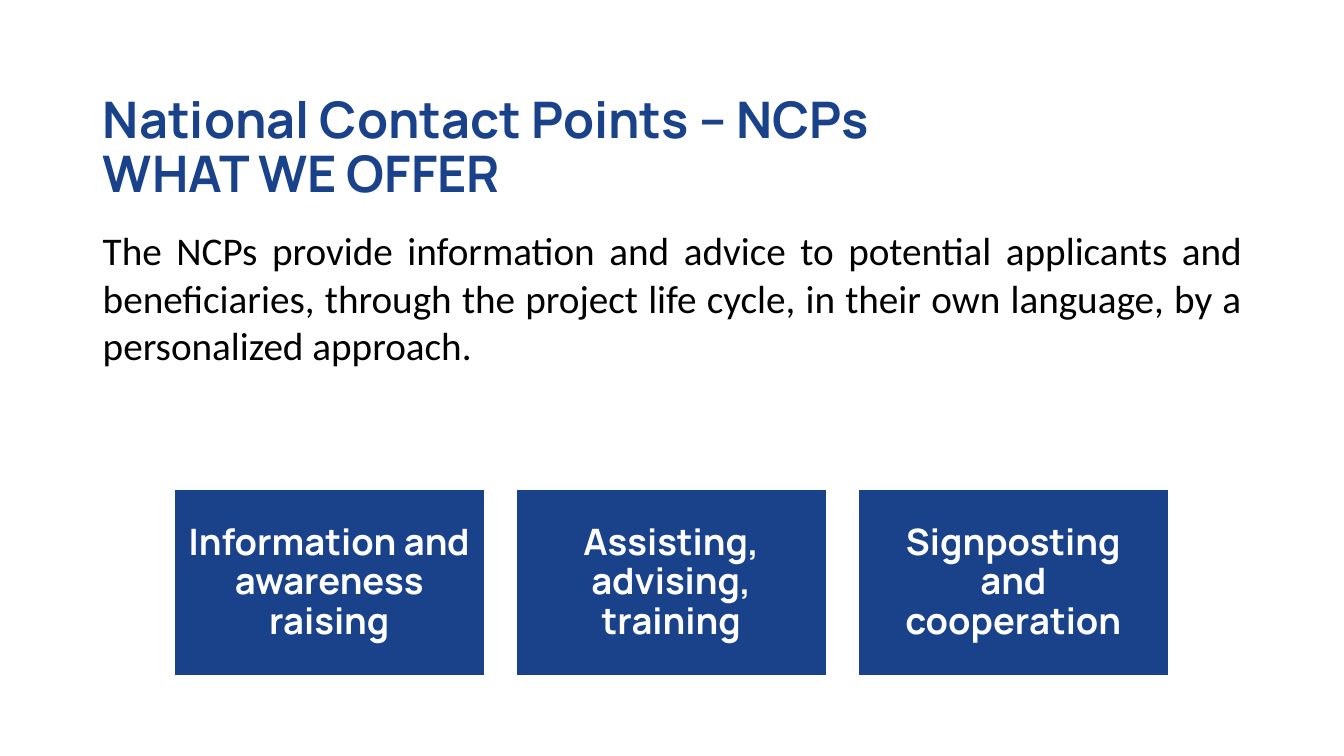
from pptx import Presentation
from pptx.dml.color import RGBColor
from pptx.enum.shapes import MSO_SHAPE
from pptx.enum.text import MSO_ANCHOR, MSO_AUTO_SIZE, PP_ALIGN
from pptx.util import Cm, Pt

BLUE = "1A428A"
WHITE = "FFFFFF"
LEFT, WIDTH = Cm(2.34), Cm(29.21)
OFFERS = [
    "Information and awareness raising",
    "Assisting, advising, training",
    "Signposting and cooperation",
]


def color(value):
    return RGBColor.from_string(value)


def add_run(p, text, size, font, value, bold=False):
    r = p.add_run()
    r.text = text
    r.font.size = Pt(size)
    r.font.name = font
    r.font.bold = bold
    r.font.color.rgb = color(value)


def set_title(s, lines):
    sp = s.shapes.title
    sp.left, sp.top, sp.width, sp.height = LEFT, Cm(3.56), WIDTH, Cm(1.57)
    tf = sp.text_frame
    tf.auto_size = MSO_AUTO_SIZE.NONE
    tf.word_wrap = True
    tf.vertical_anchor = MSO_ANCHOR.BOTTOM
    tf.margin_bottom = 0
    p = tf.paragraphs[0]
    p.alignment = PP_ALIGN.LEFT
    p.line_spacing = 0.9
    for i, line in enumerate(lines):
        if i:
            p.add_line_break()
        add_run(p, line, 36, "Manrope", BLUE, True)


def add_body(s, text):
    sp = s.shapes.add_textbox(LEFT, Cm(5.59), WIDTH, Cm(10.8))
    tf = sp.text_frame
    tf.word_wrap = True
    p = tf.paragraphs[0]
    p.alignment = PP_ALIGN.JUSTIFY
    add_run(p, text, 28, "Calibri", "000000")


def add_offer(s, left, text):
    sp = s.shapes.add_shape(MSO_SHAPE.RECTANGLE, left, Cm(12.34), Cm(7.82), Cm(4.7))
    sp.shadow.inherit = False
    sp.fill.solid()
    sp.fill.fore_color.rgb = color(BLUE)
    sp.line.color.rgb = color(WHITE)
    sp.line.width = Pt(1)
    tf = sp.text_frame
    tf.word_wrap = True
    tf.vertical_anchor = MSO_ANCHOR.MIDDLE
    tf.margin_left = tf.margin_right = tf.margin_top = tf.margin_bottom = Cm(0.28)
    p = tf.paragraphs[0]
    p.alignment = PP_ALIGN.CENTER
    p.line_spacing = 0.9
    add_run(p, text, 26, "Manrope", WHITE, True)


def main():
    prs = Presentation()
    prs.slide_width, prs.slide_height = Cm(33.87), Cm(19.05)
    s = prs.slides.add_slide(prs.slide_layouts[5])
    set_title(s, ["National Contact Points – NCPs", "WHAT WE OFFER"])
    add_body(
        s,
        "The NCPs provide information and advice to potential applicants and "
        "beneficiaries, through the project life cycle, in their own language, "
        "by a personalized approach.",
    )
    for i, text in enumerate(OFFERS):
        add_offer(s, Cm(4.39 + 8.62 * i), text)
    prs.save("out.pptx")


if __name__ == "__main__":
    main()
